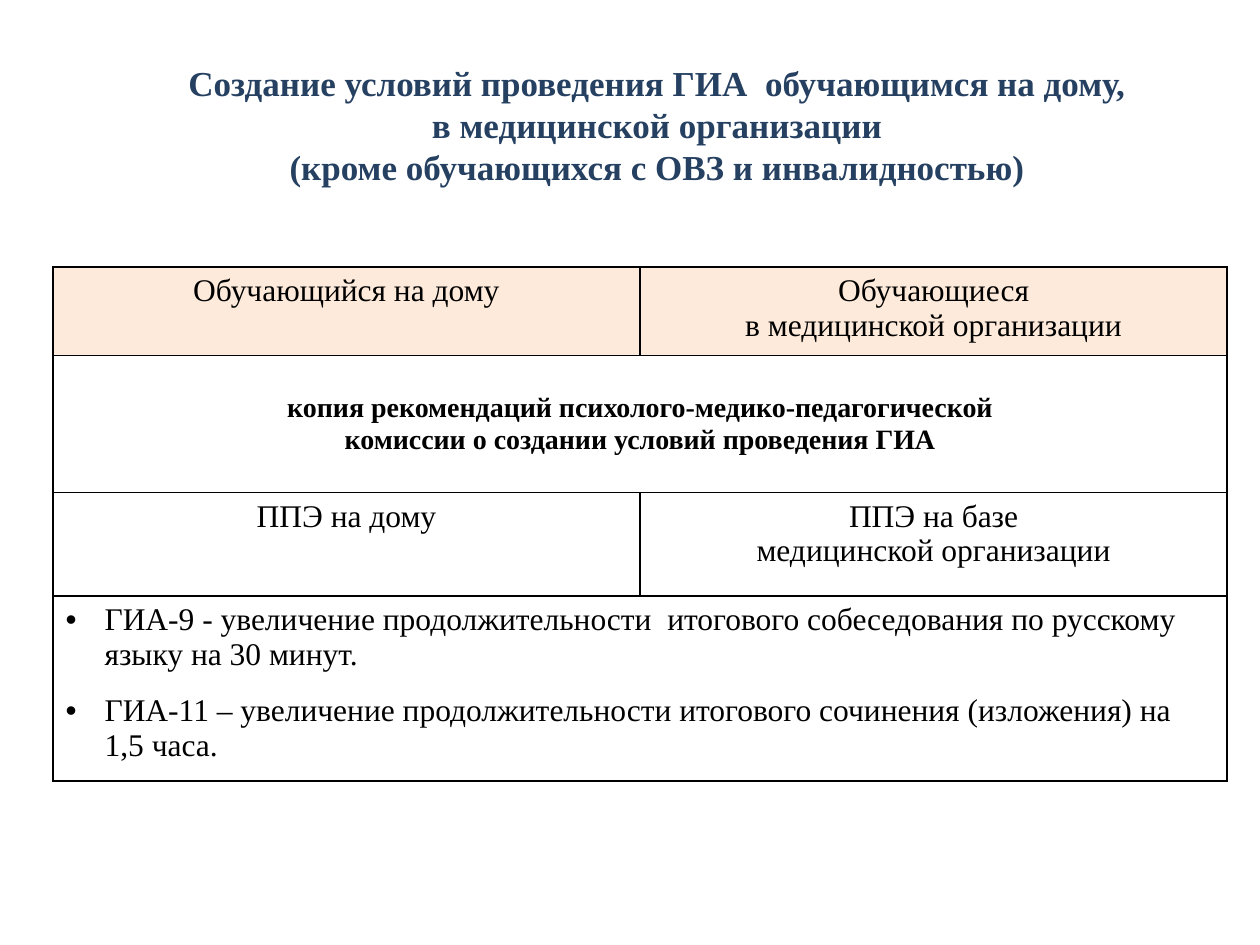
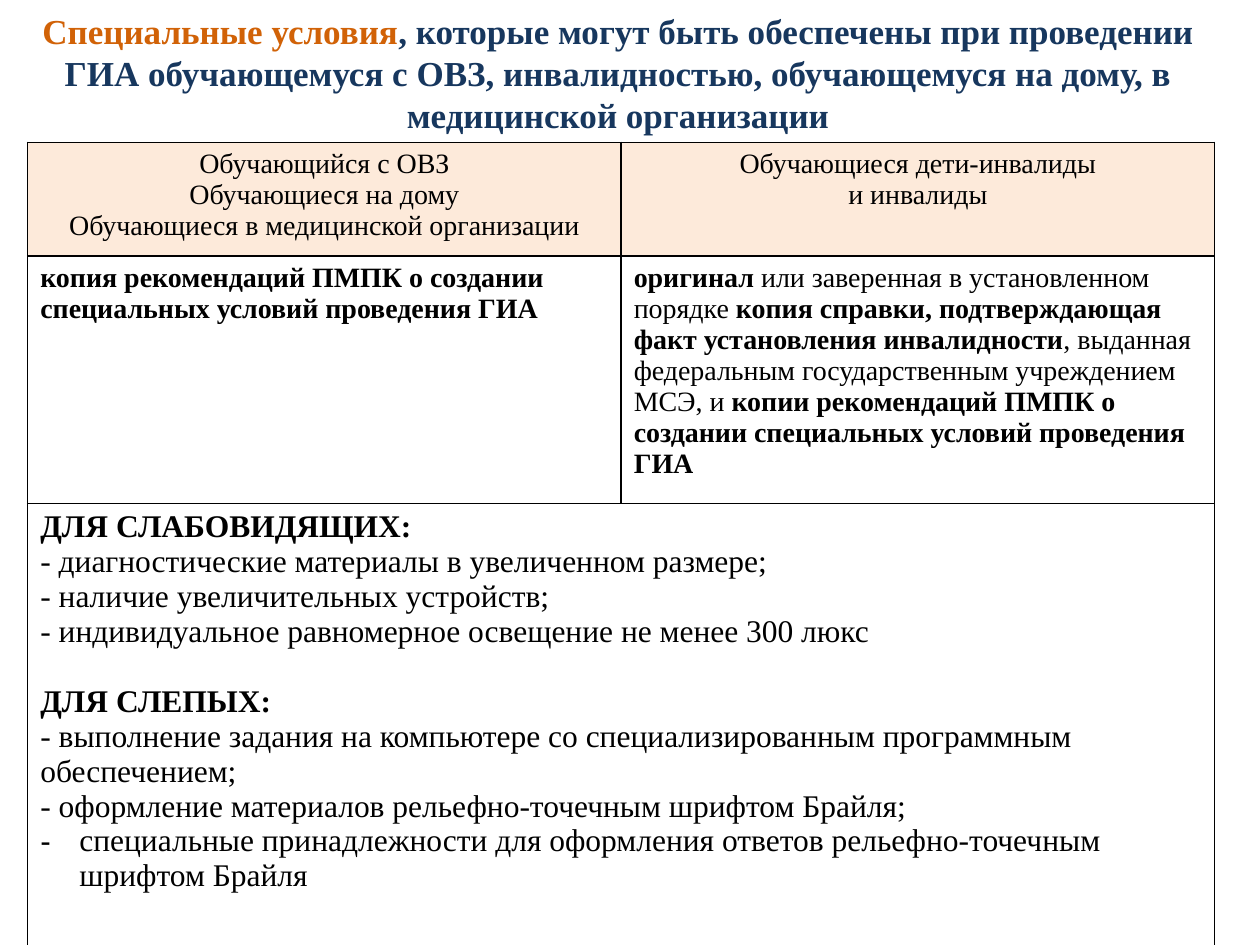
from lxml.etree import SubElement
from pptx import Presentation
from pptx.dml.color import RGBColor
from pptx.enum.text import MSO_ANCHOR, PP_ALIGN
from pptx.oxml import parse_xml
from pptx.oxml.ns import nsdecls, qn
from pptx.util import Inches, Pt

FONT = "Times New Roman"
BLACK = RGBColor(0x00, 0x00, 0x00)
NAVY = RGBColor(0x25, 0x40, 0x61)
DEEP_BLUE = RGBColor(0x17, 0x37, 0x5E)
ORANGE = RGBColor(0xD1, 0x62, 0x07)
PEACH = RGBColor(0xFD, 0xEA, 0xDA)
INDENT = Inches(0.31)

# A line is a list of (text, format) spans; a cell is (lines, format).
BOLD = {"bold": True}
CENTERED = {"align": PP_ALIGN.CENTER}

HOME_SLIDE = {
    "title": [
        [("Создание условий проведения ГИА  обучающимся на дому,", {})],
        [("в медицинской организации", {})],
        [("(кроме обучающихся с ОВЗ и инвалидностью)", {})],
    ],
    "title_color": NAVY,
    "title_area": (0.93, 0.77, 8.57, 0.44),
    "title_anchor": MSO_ANCHOR.MIDDLE,
    "table_corner": (0.42, 2.12),
    "column_width": 4.66,
    "row_heights": (0.66, 1.09, 0.82, 1.38),
    "rows": [
        [
            (["Обучающийся на дому"], CENTERED),
            (["Обучающиеся", "в медицинской организации"], CENTERED),
        ],
        [
            (
                [
                    "копия рекомендаций психолого-медико-педагогической",
                    "комиссии о создании условий проведения ГИА",
                ],
                {"size": 16, "anchor": MSO_ANCHOR.MIDDLE, **CENTERED, **BOLD},
            ),
        ],
        [
            (["ППЭ на дому"], CENTERED),
            (["ППЭ на базе", "медицинской организации"], CENTERED),
        ],
        [
            (
                [
                    "ГИА-9 - увеличение продолжительности  итогового собеседования "
                    "по русскому языку на 30 минут.",
                    "ГИА-11 – увеличение продолжительности итогового сочинения "
                    "(изложения) на 1,5 часа.",
                ],
                {"bullet": "•", "gap": 12},
            ),
        ],
    ],
}

CONDITIONS_SLIDE = {
    "title": [
        [
            ("Специальные условия", {"color": ORANGE}),
            (
                ", которые могут быть обеспечены при проведении ГИА обучающемуся "
                "с ОВЗ, инвалидностью, обучающемуся на дому, в медицинской "
                "организации",
                {},
            ),
        ],
    ],
    "title_color": DEEP_BLUE,
    "title_area": (0.03, 0.03, 9.75, 1.1),
    "title_anchor": MSO_ANCHOR.TOP,
    "table_corner": (0.22, 1.13),
    "column_width": 4.71,
    "row_heights": (0.9, 1.96, 3.52),
    "rows": [
        [
            (
                [
                    "Обучающийся с ОВЗ",
                    "Обучающиеся на дому",
                    "Обучающиеся в медицинской организации",
                ],
                {"size": 16, **CENTERED},
            ),
            (
                ["Обучающиеся дети-инвалиды", "и инвалиды"],
                {"size": 16, **CENTERED},
            ),
        ],
        [
            (
                [
                    "копия рекомендаций ПМПК о создании специальных условий "
                    "проведения ГИА"
                ],
                {"size": 16, **BOLD},
            ),
            (
                [
                    [
                        ("оригинал", BOLD),
                        (" или заверенная в установленном порядке ", {}),
                        (
                            "копия справки, подтверждающая факт установления "
                            "инвалидности",
                            BOLD,
                        ),
                        (
                            ", выданная федеральным государственным учреждением "
                            "МСЭ, и ",
                            {},
                        ),
                        (
                            "копии рекомендаций ПМПК о создании специальных "
                            "условий проведения ГИА",
                            BOLD,
                        ),
                    ]
                ],
                {"size": 16},
            ),
        ],
        [
            (
                [
                    [("ДЛЯ СЛАБОВИДЯЩИХ:", BOLD)],
                    "- диагностические материалы в увеличенном размере;",
                    "- наличие увеличительных устройств;",
                    "- индивидуальное равномерное освещение не менее 300 люкс",
                    [("ДЛЯ СЛЕПЫХ:", {"before": 20, **BOLD})],
                    "- выполнение задания на компьютере со специализированным "
                    "программным обеспечением;",
                    "- оформление материалов рельефно-точечным шрифтом Брайля;",
                    [
                        (
                            "специальные принадлежности для оформления ответов "
                            "рельефно-точечным  шрифтом Брайля",
                            {"bullet": "-"},
                        )
                    ],
                ],
                {},
            ),
        ],
    ],
}


def add_bullet(para, symbol):
    properties = para._p.get_or_add_pPr()
    properties.set("marL", str(INDENT))
    properties.set("indent", str(-INDENT))
    SubElement(properties, qn("a:buFont"), typeface="Arial")
    SubElement(properties, qn("a:buChar"), char=symbol)


def write_text(frame, lines, size=18, color=BLACK, bold=False, align=PP_ALIGN.LEFT,
               anchor=MSO_ANCHOR.TOP, bullet=None, gap=0, spacing=None):
    frame.word_wrap = True
    frame.vertical_anchor = anchor
    for index, line in enumerate(lines):
        spans = [(line, {})] if isinstance(line, str) else line
        first_format = spans[0][1]
        para = frame.paragraphs[0] if index == 0 else frame.add_paragraph()
        para.alignment = align
        para.line_spacing = spacing
        para.space_before = Pt(first_format.get("before", gap if index else 0))
        symbol = first_format.get("bullet", bullet)
        if symbol:
            add_bullet(para, symbol)
        for text, span_format in spans:
            span = para.add_run()
            span.text = text
            span.font.name = FONT
            span.font.size = Pt(size)
            span.font.bold = span_format.get("bold", bold)
            span.font.color.rgb = span_format.get("color", color)


def add_borders(cell):
    properties = cell._tc.get_or_add_tcPr()
    for position, side in enumerate("LRTB"):
        border = parse_xml(
            f'<a:ln{side} {nsdecls("a")} w="{Pt(1)}"><a:solidFill>'
            f'<a:srgbClr val="{BLACK}"/></a:solidFill></a:ln{side}>'
        )
        properties.insert(position, border)


def add_title(page, content):
    box = page.shapes.add_textbox(*map(Inches, content["title_area"]))
    write_text(box.text_frame, content["title"], size=20, bold=True,
               color=content["title_color"], align=PP_ALIGN.CENTER,
               anchor=content["title_anchor"], spacing=Pt(24))


def add_conditions_table(page, content):
    rows, heights = content["rows"], content["row_heights"]
    left, top = content["table_corner"]
    width = content["column_width"]
    table = page.shapes.add_table(
        len(rows), 2, Inches(left), Inches(top), Inches(2 * width), Inches(sum(heights))
    ).table
    table.first_row = table.horz_banding = False
    for column in table.columns:
        column.width = Inches(width)
    for row_index, (cells, height) in enumerate(zip(rows, heights)):
        table.rows[row_index].height = Inches(height)
        for column_index in range(2):
            cell = table.cell(row_index, column_index)
            if row_index == 0:
                cell.fill.solid()
                cell.fill.fore_color.rgb = PEACH
            else:
                cell.fill.background()
            add_borders(cell)
        if len(cells) == 1:
            table.cell(row_index, 0).merge(table.cell(row_index, 1))
        for column_index, (lines, text_format) in enumerate(cells):
            cell = table.cell(row_index, column_index)
            cell.vertical_anchor = text_format.get("anchor", MSO_ANCHOR.TOP)
            write_text(cell.text_frame, lines, **text_format)


def main():
    deck = Presentation()
    deck.slide_width, deck.slide_height = Inches(10), Inches(7.5)
    for content in (HOME_SLIDE, CONDITIONS_SLIDE):
        page = deck.slides.add_slide(deck.slide_layouts[6])
        add_title(page, content)
        add_conditions_table(page, content)
    deck.save("out.pptx")


if __name__ == "__main__":
    main()
